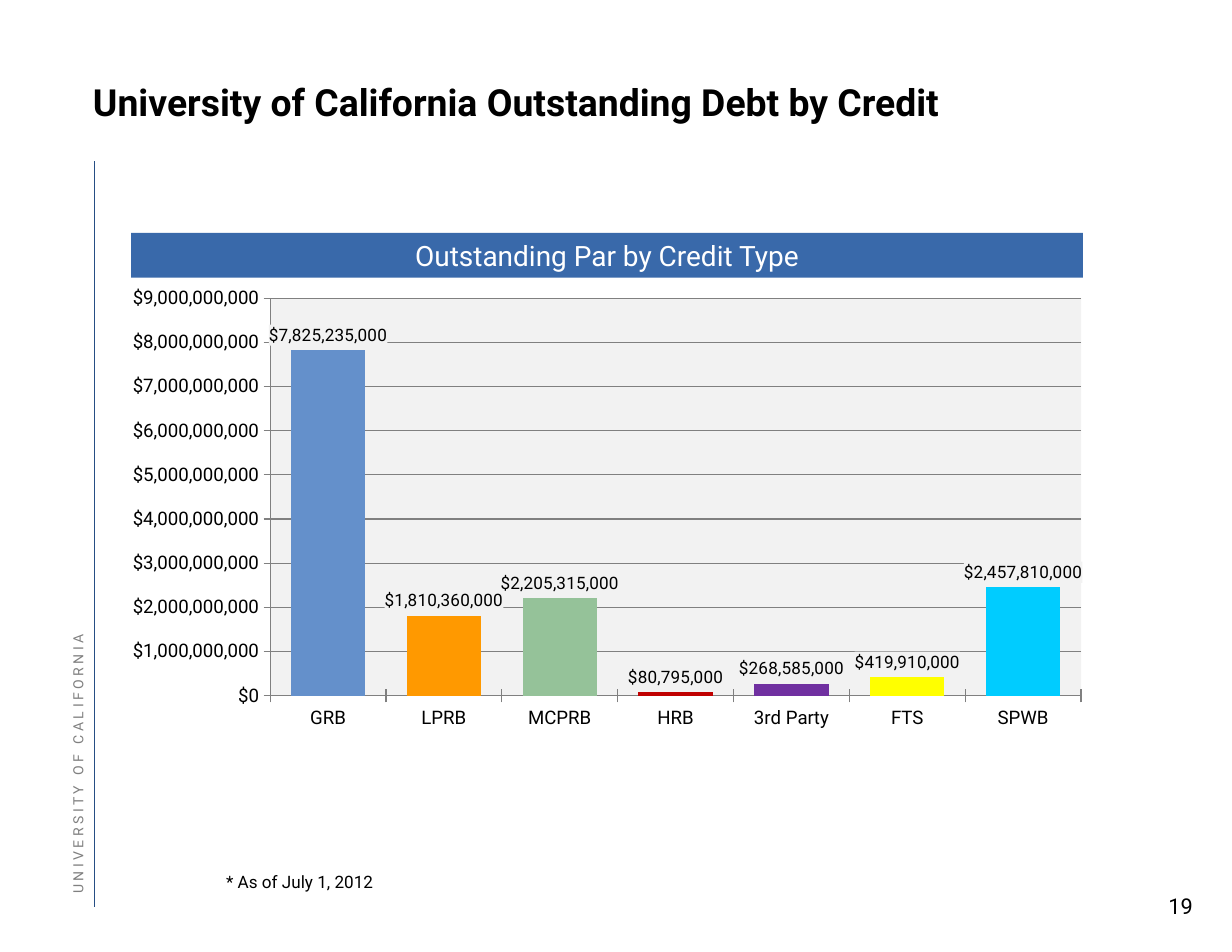
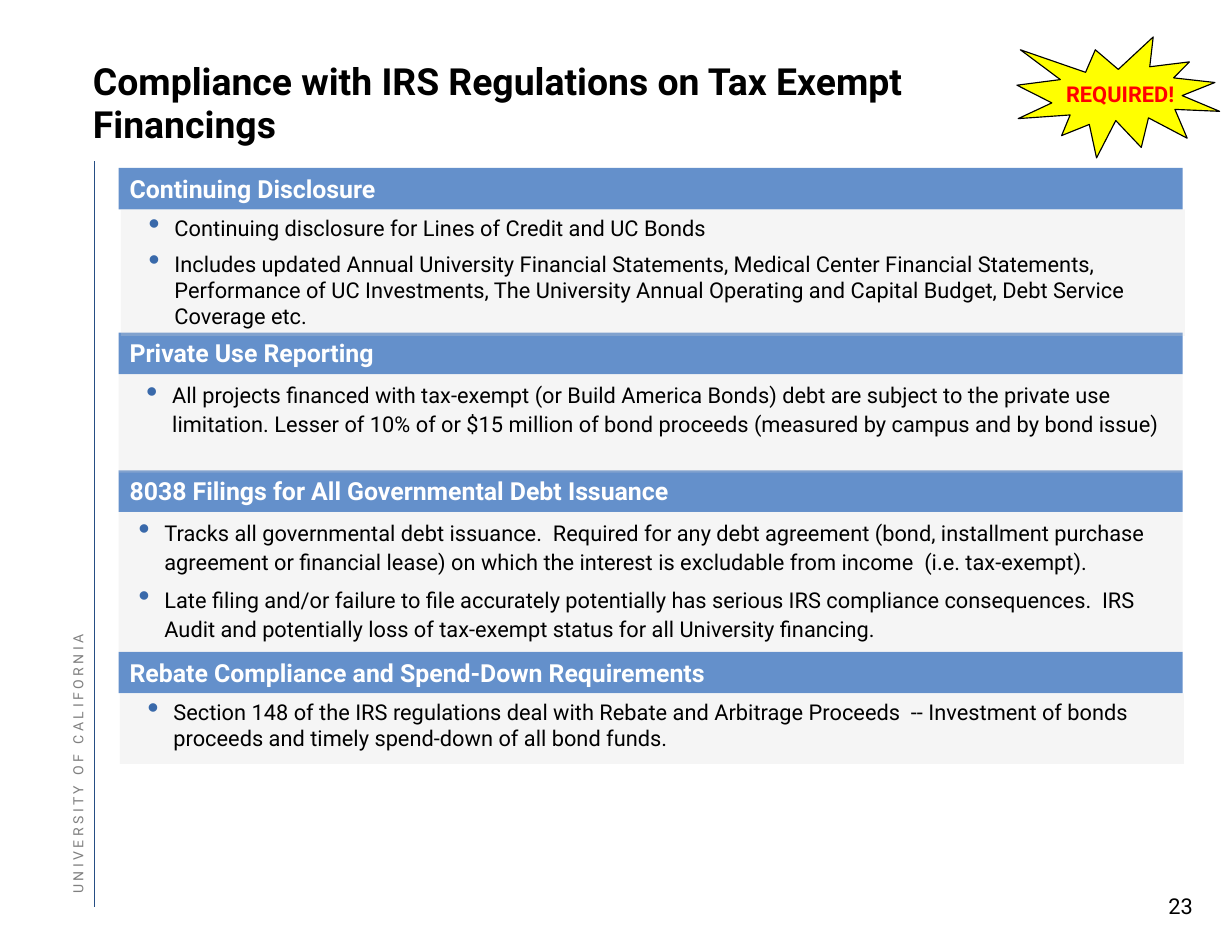
"""Builds two slides on university debt and tax compliance."""
from lxml.etree import SubElement
from pptx import Presentation
from pptx.chart.data import CategoryChartData
from pptx.dml.color import RGBColor
from pptx.enum.chart import XL_CHART_TYPE, XL_LABEL_POSITION, XL_TICK_MARK
from pptx.enum.shapes import MSO_CONNECTOR, MSO_SHAPE
from pptx.enum.text import MSO_ANCHOR, PP_ALIGN
from pptx.oxml import parse_xml
from pptx.oxml.ns import nsdecls, qn
from pptx.util import Inches, Pt

FONT = "Roboto"
BLACK = RGBColor(0x00, 0x00, 0x00)
WHITE = RGBColor(0xFF, 0xFF, 0xFF)
GRAY = RGBColor(0x80, 0x80, 0x80)
SILVER = RGBColor(0xD9, 0xD9, 0xD9)
PALE = RGBColor(0xF2, 0xF2, 0xF2)
NAVY = RGBColor(0x26, 0x4E, 0x84)
BLUE = RGBColor(0x39, 0x69, 0xAA)
SKY = RGBColor(0x64, 0x90, 0xCB)
ORANGE = RGBColor(0xFF, 0x99, 0x00)
GREEN = RGBColor(0x95, 0xC2, 0x99)
MAROON = RGBColor(0xC0, 0x00, 0x00)
PURPLE = RGBColor(0x70, 0x30, 0xA0)
YELLOW = RGBColor(0xFF, 0xFF, 0x00)
CYAN = RGBColor(0x00, 0xCC, 0xFF)
RED = RGBColor(0xFF, 0x00, 0x00)

DEBT = [
    ("GRB", 7825235000, SKY),
    ("LPRB", 1810360000, ORANGE),
    ("MCPRB", 2205315000, GREEN),
    ("HRB", 80795000, MAROON),
    ("3rd Party", 268585000, PURPLE),
    ("FTS", 419910000, YELLOW),
    ("SPWB", 2457810000, CYAN),
]

RULES = [
    (1.5, "Continuing Disclosure", 1.08, 1.13, 0.38, None, [
        "Continuing disclosure for Lines of Credit and UC Bonds",
        "Includes updated Annual University Financial Statements, Medical Center "
        "Financial Statements, Performance of UC Investments, The University Annual "
        "Operating and Capital Budget, Debt Service Coverage etc."]),
    (2.97, "Private Use Reporting", 1.06, 0.88, 0.38, 1.1, [
        "All projects financed with tax-exempt (or Build America Bonds) debt are "
        "subject to the private use limitation. Lesser of 10% of or $15 million of "
        "bond proceeds (measured by campus and by bond issue)"]),
    (4.2, "8038 Filings for All Governmental Debt Issuance", 1.06, 1.25, 0.31, 1.1, [
        "Tracks all governmental debt issuance.  Required for any debt agreement "
        "(bond, installment purchase agreement or financial lease) on which the "
        "interest is excludable from income  (i.e. tax-exempt).",
        "Late filing and/or failure to file accurately potentially has serious IRS "
        "compliance consequences.  IRS Audit and potentially loss of tax-exempt "
        "status for all University financing."]),
    (5.82, "Rebate Compliance and Spend-Down Requirements", 1.07, 0.63, 0.38, None, [
        "Section 148 of the IRS regulations deal with Rebate and Arbitrage Proceeds  "
        "-- Investment of bonds proceeds and timely spend-down of all bond funds."]),
]


def write(frame, *lines, size=14, color=BLACK, bold=False, align=PP_ALIGN.LEFT,
          anchor=MSO_ANCHOR.TOP, wrap=True, inset=None, space=None, indent=None):
    frame.word_wrap = wrap
    frame.vertical_anchor = anchor
    if inset is not None:
        frame.margin_left = frame.margin_right = Inches(inset)
        frame.margin_top = frame.margin_bottom = Inches(inset)
    for i, line in enumerate(lines):
        para = frame.add_paragraph() if i else frame.paragraphs[0]
        if indent:
            bullet(para, indent)
        para.alignment = align
        if space:
            para.line_spacing = space
        if i:
            para.space_before = Pt(6)
        run = para.add_run()
        run.text = line
        font = run.font
        font.name, font.size, font.bold = FONT, Pt(size), bold
        font.color.rgb = color


def bullet(para, indent):
    para.level = 1
    props = para._p.get_or_add_pPr()
    props.set("marL", str(Inches(indent)))
    props.set("indent", str(Inches(-0.23)))
    tint = SubElement(props, qn("a:buClr"))
    SubElement(tint, qn("a:srgbClr"), val=str(BLUE))
    SubElement(props, qn("a:buSzPct"), val="150000")
    SubElement(props, qn("a:buChar"), char="•")


class Deck:
    def __init__(self):
        self.show = Presentation()
        self.show.slide_width = Inches(11)
        self.show.slide_height = Inches(8.5)
        self.slide = None

    def page(self, title, number):
        self.slide = self.show.slides.add_slide(self.show.slide_layouts[5])
        self.line(0.84, 1.44, 0.84, 8.1)
        self.text((10.25, 7.92, 0.5, 0.34), str(number), align=PP_ALIGN.RIGHT)
        side = self.text((-1.47, 5.74, 4.33, 0.15),
                         " ".join("UNIVERSITY OF CALIFORNIA"), size=9, color=GRAY,
                         anchor=MSO_ANCHOR.BOTTOM, wrap=False, inset=0, space=Pt(12))
        side.rotation = 270
        head = self.slide.shapes.title
        head.left, head.top, head.width, head.height = map(Inches, (0.83, 0.58, 8, 0.67))
        write(head.text_frame, title, size=24, bold=True, anchor=MSO_ANCHOR.MIDDLE,
              inset=0, space=Pt(27.9))

    def line(self, x1, y1, x2, y2):
        rule = self.slide.shapes.add_connector(
            MSO_CONNECTOR.STRAIGHT, *map(Inches, (x1, y1, x2, y2)))
        rule.line.color.rgb = NAVY
        rule.line.width = Pt(0.35)
        SubElement(rule._element.spPr, qn("a:effectLst"))

    def text(self, box, *lines, **style):
        item = self.slide.shapes.add_textbox(*map(Inches, box))
        write(item.text_frame, *lines, **style)
        return item

    def shape(self, box, fill, *lines, kind=MSO_SHAPE.RECTANGLE, edge=None,
              alpha=None, **style):
        item = self.slide.shapes.add_shape(kind, *map(Inches, box))
        item.shadow.inherit = False
        item.fill.solid()
        item.fill.fore_color.rgb = fill
        if alpha:
            tint = item._element.spPr.find(".//" + qn("a:srgbClr"))
            SubElement(tint, qn("a:alpha"), val=str(alpha * 1000))
        if edge is None:
            item.line.fill.background()
        else:
            item.line.color.rgb = edge
            item.line.width = Pt(0.75)
        write(item.text_frame, *lines, **style)

    def chart(self, box, rows):
        data = CategoryChartData(number_format='"$"#,##0')
        data.categories = [row[0] for row in rows]
        data.add_series("Series 1", [row[1] for row in rows])
        chart = self.slide.shapes.add_chart(
            XL_CHART_TYPE.COLUMN_CLUSTERED, *map(Inches, box), data).chart
        chart.has_legend = chart.has_title = False
        chart.font.name, chart.font.size = FONT, Pt(10)
        chart.font.color.rgb = BLACK
        for axis in (chart.category_axis, chart.value_axis):
            axis.major_tick_mark = XL_TICK_MARK.CROSS
            axis.minor_tick_mark = XL_TICK_MARK.NONE
            axis.tick_labels.font.size = Pt(12)
            axis.format.line.color.rgb = GRAY
        scale = chart.value_axis
        scale.minimum_scale, scale.maximum_scale = 0, 9000000000
        scale.major_unit = 1000000000
        scale.tick_labels.number_format = '"$"#,##0'
        scale.tick_labels.number_format_is_linked = False
        scale.major_gridlines.format.line.color.rgb = GRAY
        self.bars(chart.plots[0], [row[2] for row in rows])
        self.area(chart)

    def bars(self, plot, colors):
        plot.gap_width = 56
        plot.vary_by_categories = False
        series = plot.series[0]
        series.format.fill.solid()
        series.format.fill.fore_color.rgb = colors[0]
        for i, color in enumerate(colors[1:], 1):
            fill = series.points[i].format.fill
            fill.solid()
            fill.fore_color.rgb = color
        labels = series.data_labels
        labels.show_value = True
        labels.position = XL_LABEL_POSITION.OUTSIDE_END
        labels.number_format = '"$"#,##0'
        labels.number_format_is_linked = False
        labels.font.size = Pt(11)
        labels.font.name = FONT
        labels.font.color.rgb = BLACK
        labels._element.find(qn("c:txPr")).addprevious(self.back())

    def back(self):
        return parse_xml(f'<c:spPr {nsdecls("c", "a")}><a:solidFill>'
                         f'<a:srgbClr val="{PALE}"/></a:solidFill></c:spPr>')

    def area(self, chart):
        area = chart._chartSpace.chart.plotArea
        for old in area.findall(qn("c:layout")):
            area.remove(old)
        layout = parse_xml(f'<c:layout {nsdecls("c")}><c:manualLayout/></c:layout>')
        parts = [("layoutTarget", "inner"), ("xMode", "edge"), ("yMode", "edge"),
                 ("x", 0.16), ("y", 0.04), ("w", 0.82), ("h", 0.87)]
        for name, value in parts:
            SubElement(layout[0], qn("c:" + name), val=str(value))
        area.insert(0, layout)
        area.append(self.back())


def main():
    deck = Deck()
    deck.page("University of California Outstanding Debt by Credit", 19)
    deck.chart((1, 2.5, 8.83, 4.08), DEBT)
    deck.shape((1.17, 2.08, 8.5, 0.4), BLUE, "Outstanding Par by Credit Type",
               size=18, color=WHITE, align=PP_ALIGN.CENTER)
    deck.text((1.92, 7.73, 5.5, 0.29), "* As of July 1, 2012", size=11)

    deck.page("Compliance with IRS Regulations on Tax Exempt Financings", 23)
    for top, head, left, tall, indent, space, items in reversed(RULES):
        deck.shape((1.06, top, 9.5, 0.37), SKY, head, size=16, color=WHITE, bold=True)
        deck.shape((left, top + 0.37, 9.5, tall), SILVER, *items, alpha=25,
                   indent=indent, space=space)
    deck.shape((9.08, 0.33, 1.81, 1.08), YELLOW, kind=MSO_SHAPE.EXPLOSION1, edge=BLACK)
    deck.text((9.42, 0.67, 1.19, 0.34), "REQUIRED!", color=RED, bold=True, wrap=False)
    deck.show.save("out.pptx")


if __name__ == "__main__":
    main()
